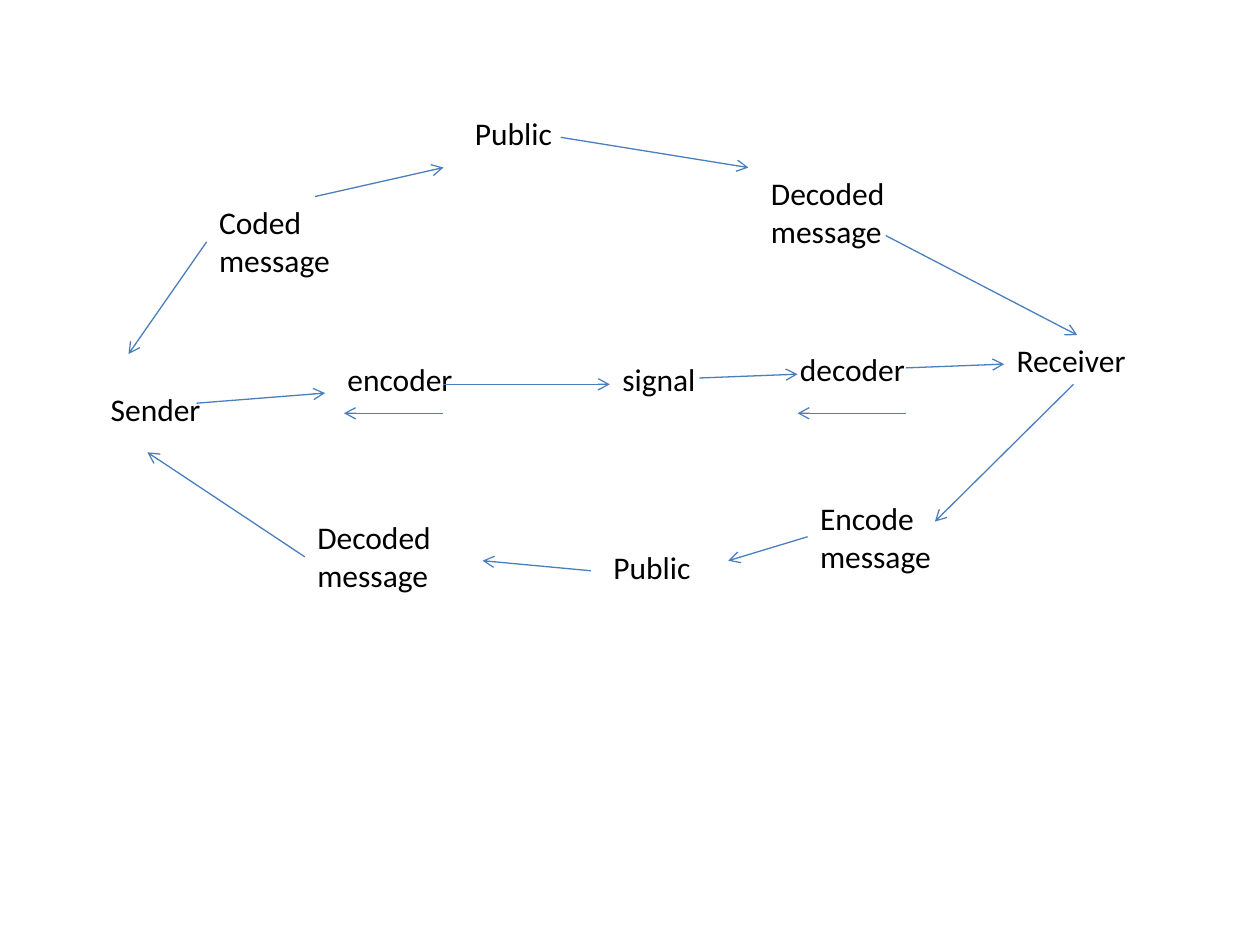
from pptx import Presentation
from pptx.dml.color import RGBColor as RGB
from pptx.enum.shapes import MSO_CONNECTOR as CONN
from pptx.enum.text import MSO_AUTO_SIZE as FIT
from pptx.oxml.ns import qn
from pptx.util import Pt
from lxml.etree import SubElement

PX = 9144
COLORS = {"text": "000000", "arrow": "4B7EBC"}

prs = Presentation()
prs.slide_width, prs.slide_height = 1000 * PX, 750 * PX
s = prs.slides.add_slide(prs.slide_layouts[6])


def add_text(text, x, y, w, h=40, size=18, font="Calibri", color="text"):
    sp = s.shapes.add_textbox(x * PX, y * PX, w * PX, h * PX)
    tf = sp.text_frame
    tf.word_wrap = True
    tf.auto_size = FIT.SHAPE_TO_FIT_TEXT
    r = tf.paragraphs[0].add_run()
    r.text = text
    r.font.size = Pt(size)
    r.font.name = font
    r.font.color.rgb = RGB.from_string(COLORS[color])


def add_arrow(x1, y1, x2, y2):
    c = s.shapes.add_connector(CONN.STRAIGHT, x1 * PX, y1 * PX, x2 * PX, y2 * PX)
    c.line.color.rgb = RGB.from_string(COLORS["arrow"])
    c.line.width = Pt(0.75)
    SubElement(c.line._get_or_add_ln(), qn("a:tailEnd"), type="arrow")
    SubElement(c._element.spPr, qn("a:effectLst"))


one_line_labels = [
    ("Public", 367, 86, 102),
    ("Receiver", 797, 266, 117),
    ("Public", 477, 430, 94),
    ("Sender", 78, 305, 109),
    ("encoder", 266, 281, 117),
    ("signal", 484, 281, 109),
    ("decoder", 625, 273, 109),
]
for text, x, y, w in one_line_labels:
    add_text(text, x, y, w)

two_line_labels = [
    ("Coded message", 164, 156, 172),
    ("Decoded message", 602, 133, 125),
    ("Encode message", 641, 391, 109),
    ("Decoded message", 242, 406, 125),
]
for text, x, y, w in two_line_labels:
    add_text(text, x, y, w, h=71)

outer_loop = [
    (250, 156, 352, 133),
    (445, 109, 594, 133),
    (703, 187, 855, 266),
    (852, 305, 742, 414),
    (641, 426, 578, 445),
    (469, 453, 383, 445),
    (242, 442, 117, 359),
    (164, 192, 102, 281),
]
signal_path = [
    (156, 320, 258, 312),
    (352, 305, 484, 305),
    (555, 300, 633, 297),
    (719, 292, 797, 289),
]
return_path = [
    (352, 328, 273, 328),
    (719, 328, 633, 328),
]
for ends in outer_loop + signal_path + return_path:
    add_arrow(*ends)

prs.save("out.pptx")
